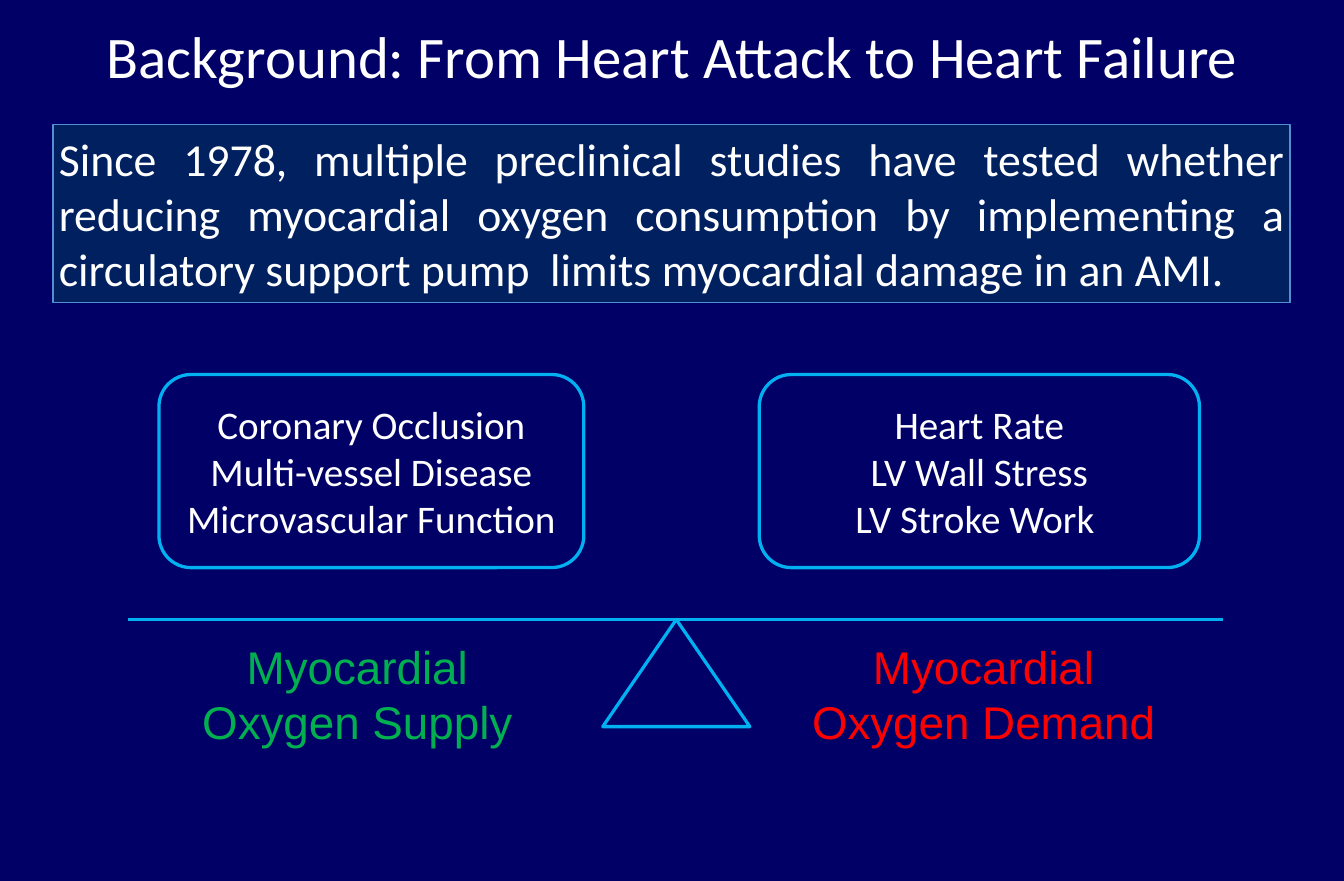
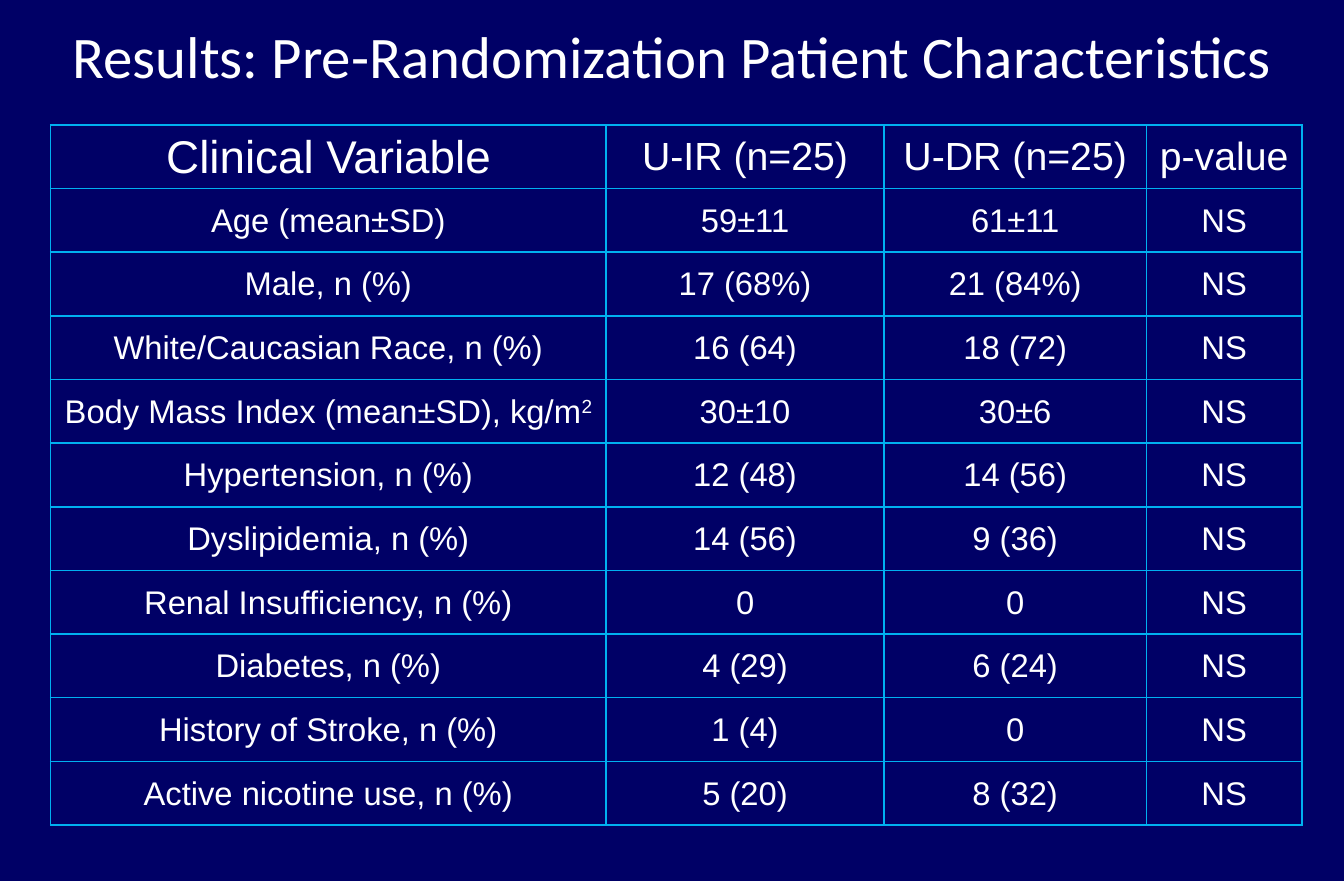
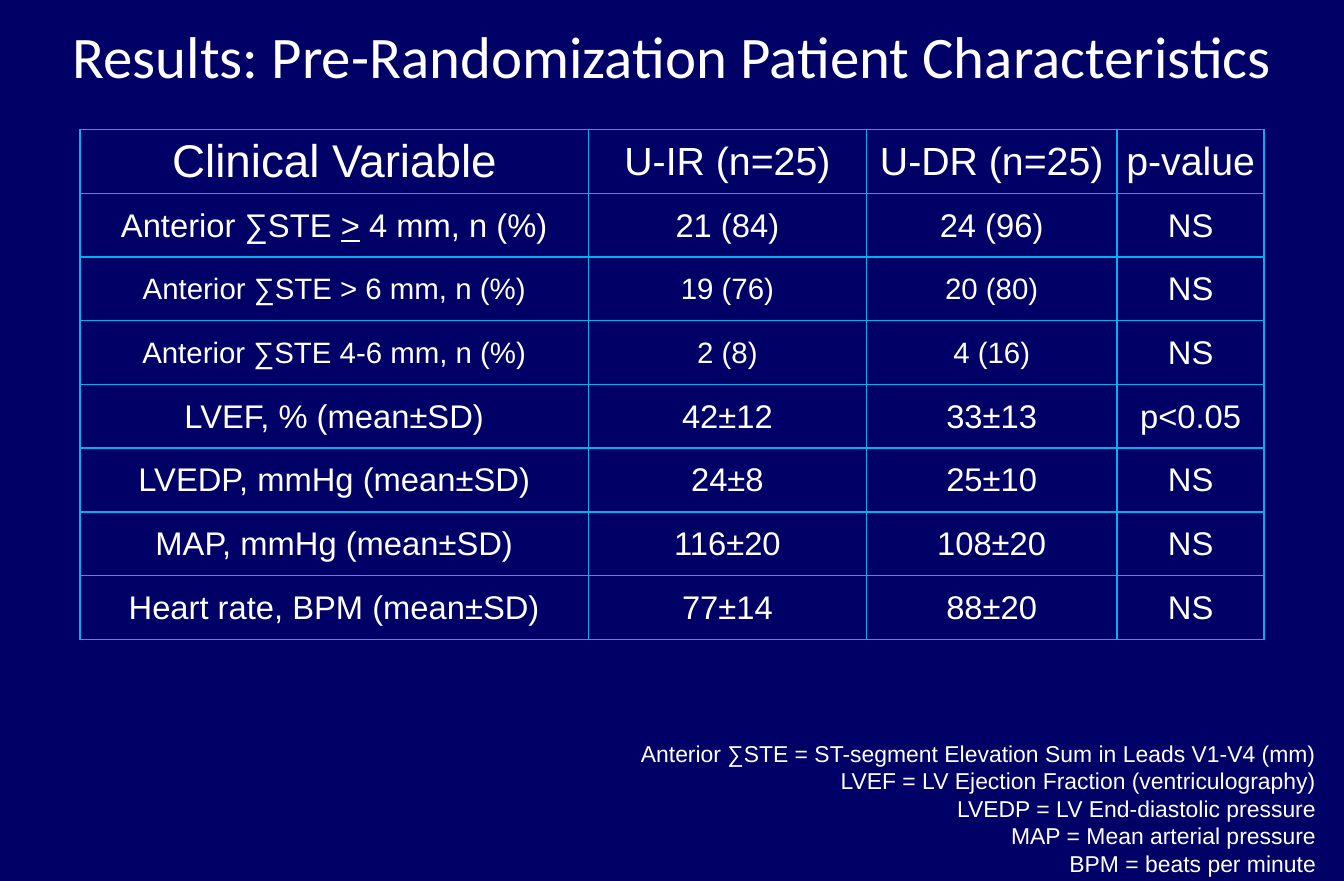
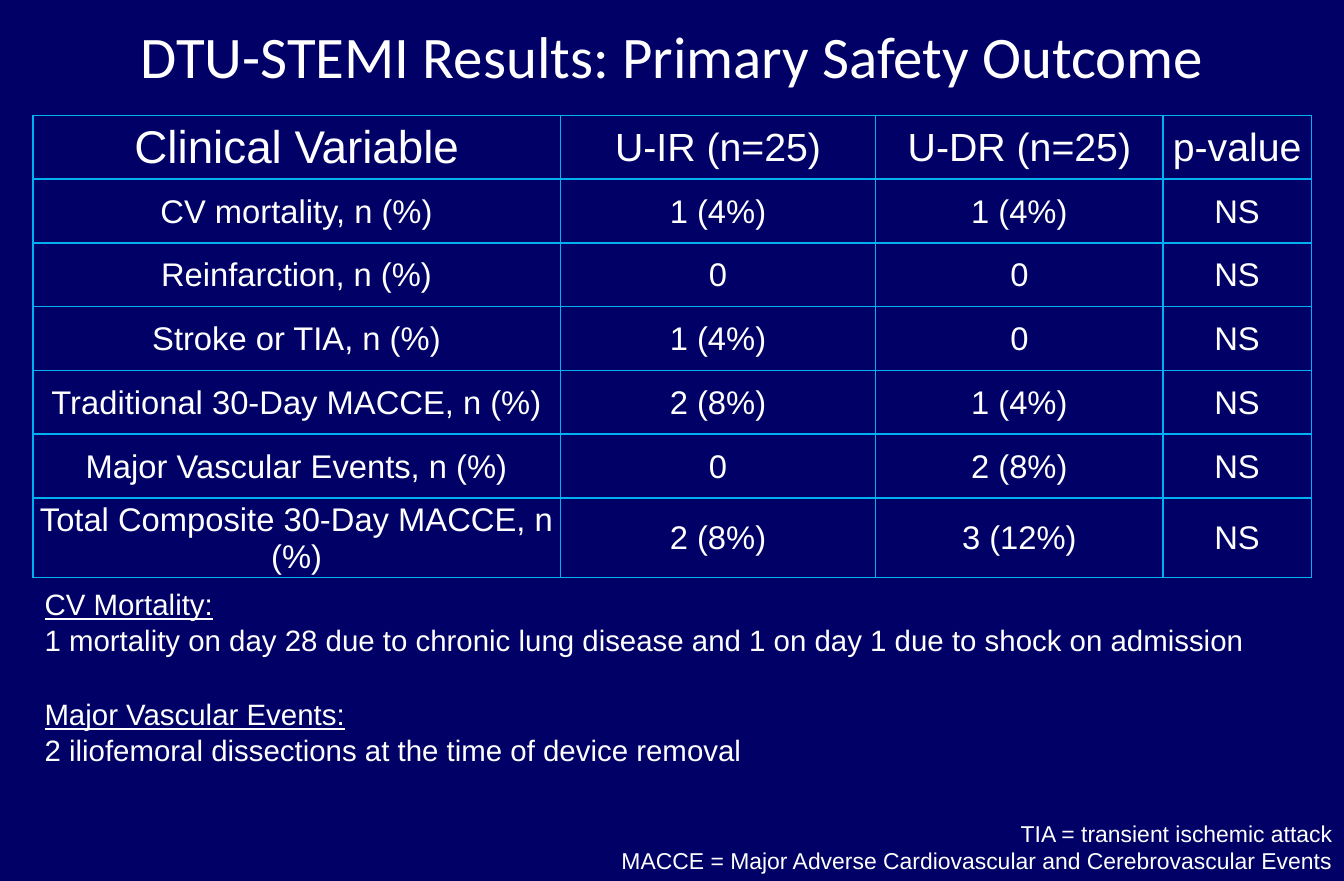
from dataclasses import dataclass
from typing import Optional, Sequence, Union

from lxml import etree
from pptx import Presentation
from pptx import util as u
from pptx.dml.color import RGBColor
from pptx.enum import shapes, text
from pptx.oxml import ns

EMU_PER_PX = 9144
SLIDE_WIDTH, SLIDE_HEIGHT = u.Mm(290), u.Mm(190)
COLORS = {
    "navy": "000066",
    "panel": "002060",
    "panel_edge": "558ED5",
    "cyan": "00B0F0",
    "white": "FFFFFF",
    "green": "00B050",
    "red": "FF0000",
}
HEADING_FONT, BODY_FONT = "Calibri", "Arial"
HEADER = ("Clinical Variable", "U-IR (n=25)", "U-DR (n=25)", "p-value")
HEADER_SIZES = (28, 24, 24, 24)
BODY_SIZE = 20
CHARACTERISTICS_TITLE = "Results: Pre-Randomization Patient Characteristics"
LEFT, CENTER, RIGHT, JUSTIFY = (
    text.PP_ALIGN.LEFT, text.PP_ALIGN.CENTER, text.PP_ALIGN.RIGHT, text.PP_ALIGN.JUSTIFY)
TOP, MIDDLE = text.MSO_ANCHOR.TOP, text.MSO_ANCHOR.MIDDLE


@dataclass(frozen=True)
class Box:
    left: int
    top: int
    width: int
    height: int

    def emu(self) -> tuple:
        return px(self.left), px(self.top), px(self.width), px(self.height)


@dataclass(frozen=True)
class Run:
    text: str
    underline: bool = False
    superscript: bool = False


@dataclass(frozen=True)
class Paragraph:
    runs: Sequence[Run]
    space_before: int = 0


Line = Union[str, Paragraph]


@dataclass(frozen=True)
class Row:
    """One table row; the p-value always keeps the body size."""
    variable: Line
    immediate: str
    delayed: str
    p_value: str = "NS"
    size: int = BODY_SIZE

    def cells(self) -> tuple:
        return self.variable, self.immediate, self.delayed, self.p_value

    def sizes(self) -> tuple:
        return self.size, self.size, self.size, BODY_SIZE


@dataclass(frozen=True)
class FactorGroup:
    box: Box
    factors: Sequence[str]
    caption_box: Box
    caption: Sequence[str]
    color: str


TITLE_BOX = Box(0, 12, 1142, 71)
CHARACTERISTICS = (
    Row("Age (mean±SD)", "59±11", "61±11"),
    Row("Male, n (%)", "17 (68%)", "21 (84%)"),
    Row("White/Caucasian Race, n (%)", "16 (64)", "18 (72)"),
    Row(Paragraph((Run("Body Mass Index (mean±SD), kg/m"), Run("2", superscript=True))),
        "30±10", "30±6"),
    Row("Hypertension, n (%)", "12 (48)", "14 (56)"),
    Row("Dyslipidemia, n (%)", "14 (56)", "9 (36)"),
    Row("Renal Insufficiency, n (%)", "0", "0"),
    Row("Diabetes, n (%)", "4 (29)", "6 (24)"),
    Row("History of Stroke, n (%)", "1 (4)", "0"),
    Row("Active nicotine use, n (%)", "5 (20)", "8 (32)"),
)
HEMODYNAMICS = (
    Row(Paragraph((Run("Anterior ∑STE "), Run(">", underline=True), Run(" 4 mm, n (%)"))),
        "21 (84)", "24 (96)"),
    Row("Anterior ∑STE > 6 mm, n (%)", "19 (76)", "20 (80)", size=18),
    Row("Anterior ∑STE 4-6 mm, n (%)", "2 (8)", "4 (16)", size=18),
    Row("LVEF, % (mean±SD)", "42±12", "33±13", "p<0.05"),
    Row("LVEDP, mmHg (mean±SD)", "24±8", "25±10"),
    Row("MAP, mmHg (mean±SD)", "116±20", "108±20"),
    Row("Heart rate, BPM (mean±SD)", "77±14", "88±20"),
)
SAFETY_OUTCOMES = (
    Row("CV mortality, n (%)", "1 (4%)", "1 (4%)"),
    Row("Reinfarction, n (%)", "0", "0"),
    Row("Stroke or TIA, n (%)", "1 (4%)", "0"),
    Row("Traditional 30-Day MACCE, n (%)", "2 (8%)", "1 (4%)"),
    Row("Major Vascular Events, n (%)", "0", "2 (8%)"),
    Row("Total Composite 30-Day MACCE, n (%)", "2 (8%)", "3 (12%)"),
)
FACTOR_GROUPS = (
    FactorGroup(Box(645, 318, 374, 164), ("Heart Rate", "LV Wall Stress", "LV Stroke Work "),
                Box(665, 537, 341, 104), ("Myocardial", "Oxygen Demand"), "red"),
    FactorGroup(Box(135, 318, 361, 164),
                ("Coronary Occlusion", "Multi-vessel Disease", "Microvascular Function"),
                Box(133, 537, 341, 104), ("Myocardial", "Oxygen Supply"), "green"),
)


def px(length: float) -> u.Emu:
    return u.Emu(round(length * EMU_PER_PX))


def rgb(name: str) -> RGBColor:
    return RGBColor.from_string(COLORS[name])


def write_text(frame, lines: Sequence[Line], *, size: float, font: str = BODY_FONT,
               color: str = "white", align=LEFT) -> None:
    for index, line in enumerate(lines):
        content = Paragraph((Run(line),)) if isinstance(line, str) else line
        paragraph = frame.paragraphs[0] if index == 0 else frame.add_paragraph()
        paragraph.alignment = align
        if content.space_before:
            paragraph.space_before = u.Pt(content.space_before)
        for part in content.runs:
            run = paragraph.add_run()
            run.text = part.text
            run.font.name = font
            run.font.size = u.Pt(size)
            run.font.color.rgb = rgb(color)
            if part.underline:
                run.font.underline = True
            if part.superscript:
                run._r.get_or_add_rPr().set("baseline", "30000")


def add_text(slide, box: Box, lines: Sequence[Line], *, wrap: bool = True, **text_format) -> None:
    frame = slide.shapes.add_textbox(*box.emu()).text_frame
    frame.word_wrap = wrap
    write_text(frame, lines, **text_format)


def add_shape(slide, kind, box: Box, *, line: str, line_width: float,
              fill: Optional[str] = None):
    shape = slide.shapes.add_shape(kind, *box.emu())
    shape.shadow.inherit = False
    if fill:
        shape.fill.solid()
        shape.fill.fore_color.rgb = rgb(fill)
    else:
        shape.fill.background()
    shape.line.color.rgb = rgb(line)
    shape.line.width = u.Pt(line_width)
    return shape


def add_beam(slide, left: int, right: int, y: int) -> None:
    beam = slide.shapes.add_connector(
        shapes.MSO_CONNECTOR.STRAIGHT, px(left), px(y), px(right), px(y))
    beam.line.color.rgb = rgb("cyan")
    beam.line.width = u.Pt(2.25)
    etree.SubElement(beam._element.spPr, ns.qn("a:effectLst"))


def add_cell_borders(cell) -> None:
    properties = cell._tc.get_or_add_tcPr()
    for position, tag in enumerate(("a:lnL", "a:lnR", "a:lnT", "a:lnB")):
        border = etree.Element(ns.qn(tag), w=str(u.Pt(1)))
        fill = etree.SubElement(border, ns.qn("a:solidFill"))
        etree.SubElement(fill, ns.qn("a:srgbClr"), val=COLORS["cyan"])
        properties.insert(position, border)


def add_results_table(slide, left: int, top: int, height: int, columns: Sequence[int],
                      rows: Sequence[Row]) -> None:
    contents = [(HEADER, HEADER_SIZES)] + [(row.cells(), row.sizes()) for row in rows]
    box = Box(left, top, sum(columns), height)
    table = slide.shapes.add_table(len(contents), len(columns), *box.emu()).table
    table.first_row = table.horz_banding = False
    for column, width in zip(table.columns, columns):
        column.width = px(width)
    for table_row, (lines, sizes) in zip(table.rows, contents):
        table_row.height = px(height / len(contents))
        for cell, line, size in zip(table_row.cells, lines, sizes):
            cell.fill.background()
            cell.margin_left = cell.margin_right = cell.margin_top = px(1)
            cell.margin_bottom = 0
            cell.vertical_anchor = MIDDLE
            write_text(cell.text_frame, [line], size=size, align=CENTER)
            add_cell_borders(cell)


def add_titled_slide(presentation, title: str):
    slide = presentation.slides.add_slide(presentation.slide_layouts[6])
    add_text(slide, TITLE_BOX, [title], size=36, font=HEADING_FONT, align=CENTER)
    return slide


def build_background(presentation) -> None:
    slide = add_titled_slide(presentation, "Background: From Heart Attack to Heart Failure")
    panel = add_shape(slide, shapes.MSO_SHAPE.RECTANGLE, Box(45, 106, 1051, 151),
                      fill="panel", line="panel_edge", line_width=0.75)
    frame = panel.text_frame
    frame.margin_left = frame.margin_right = frame.margin_top = frame.margin_bottom = px(5)
    frame.vertical_anchor = TOP
    write_text(frame, [
        "Since 1978, multiple preclinical studies have tested whether reducing myocardial "
        "oxygen consumption by implementing a circulatory support pump  limits myocardial "
        "damage in an AMI. "], size=28, font=HEADING_FONT, align=JUSTIFY)
    for group in FACTOR_GROUPS:
        shape = add_shape(slide, shapes.MSO_SHAPE.ROUNDED_RECTANGLE, group.box,
                          line="cyan", line_width=2)
        shape.text_frame.vertical_anchor = MIDDLE
        write_text(shape.text_frame, group.factors, size=23.9, font=HEADING_FONT, align=CENTER)
        add_text(slide, group.caption_box, group.caption, size=28, color=group.color,
                 align=CENTER)
    add_beam(slide, 109, 1039, 526)
    add_shape(slide, shapes.MSO_SHAPE.ISOSCELES_TRIANGLE, Box(512, 526, 125, 91),
              line="cyan", line_width=2)


def build_characteristics(presentation) -> None:
    slide = add_titled_slide(presentation, CHARACTERISTICS_TITLE)
    add_results_table(slide, 43, 106, 595, (472, 236, 223, 132), CHARACTERISTICS)


def build_hemodynamics(presentation) -> None:
    slide = add_titled_slide(presentation, CHARACTERISTICS_TITLE)
    add_results_table(slide, 68, 110, 433, (432, 236, 213, 125), HEMODYNAMICS)
    add_text(slide, Box(532, 623, 596, 125), [
        "Anterior ∑STE = ST-segment Elevation Sum in Leads V1-V4 (mm)",
        "LVEF = LV Ejection Fraction (ventriculography)",
        "LVEDP = LV End-diastolic pressure",
        "MAP = Mean arterial pressure",
        "BPM = beats per minute",
    ], size=14, align=RIGHT, wrap=False)


def build_safety_outcome(presentation) -> None:
    slide = add_titled_slide(presentation, "DTU-STEMI Results: Primary Safety Outcome")
    add_results_table(slide, 28, 98, 379, (448, 268, 244, 126), SAFETY_OUTCOMES)
    add_text(slide, Box(515, 691, 627, 57), [
        "TIA = transient ischemic attack",
        "MACCE = Major Adverse Cardiovascular and Cerebrovascular Events",
    ], size=14, align=RIGHT, wrap=False)
    add_text(slide, Box(28, 493, 1102, 165), [
        Paragraph((Run("CV Mortality:", underline=True),)),
        "1 mortality on day 28 due to chronic lung disease and 1 on day 1 due to shock "
        "on admission",
        Paragraph((Run("Major Vascular Events:", underline=True),), space_before=24),
        "2 iliofemoral dissections at the time of device removal",
    ], size=18)


def main() -> None:
    presentation = Presentation()
    presentation.slide_width = SLIDE_WIDTH
    presentation.slide_height = SLIDE_HEIGHT
    background = presentation.slide_master.background.fill
    background.solid()
    background.fore_color.rgb = rgb("navy")
    for build in (build_background, build_characteristics, build_hemodynamics,
                  build_safety_outcome):
        build(presentation)
    presentation.save("out.pptx")


if __name__ == "__main__":
    main()
